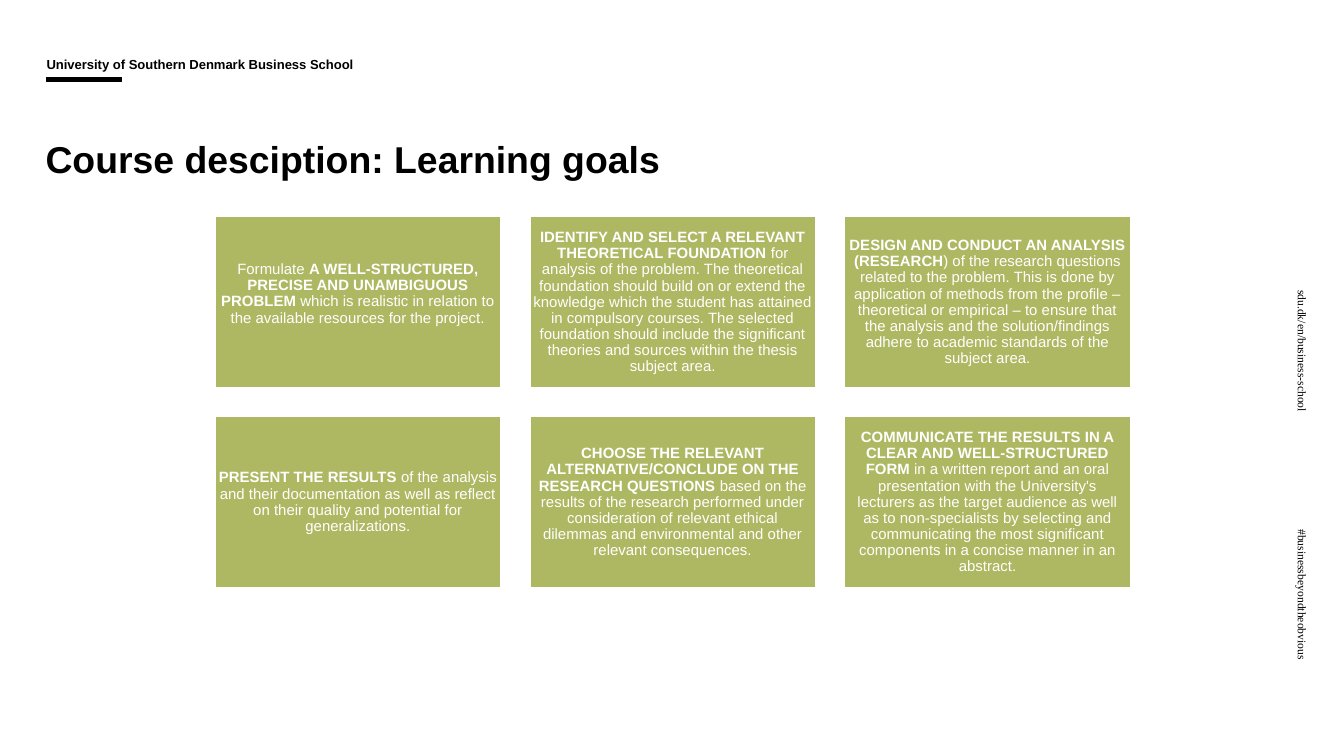
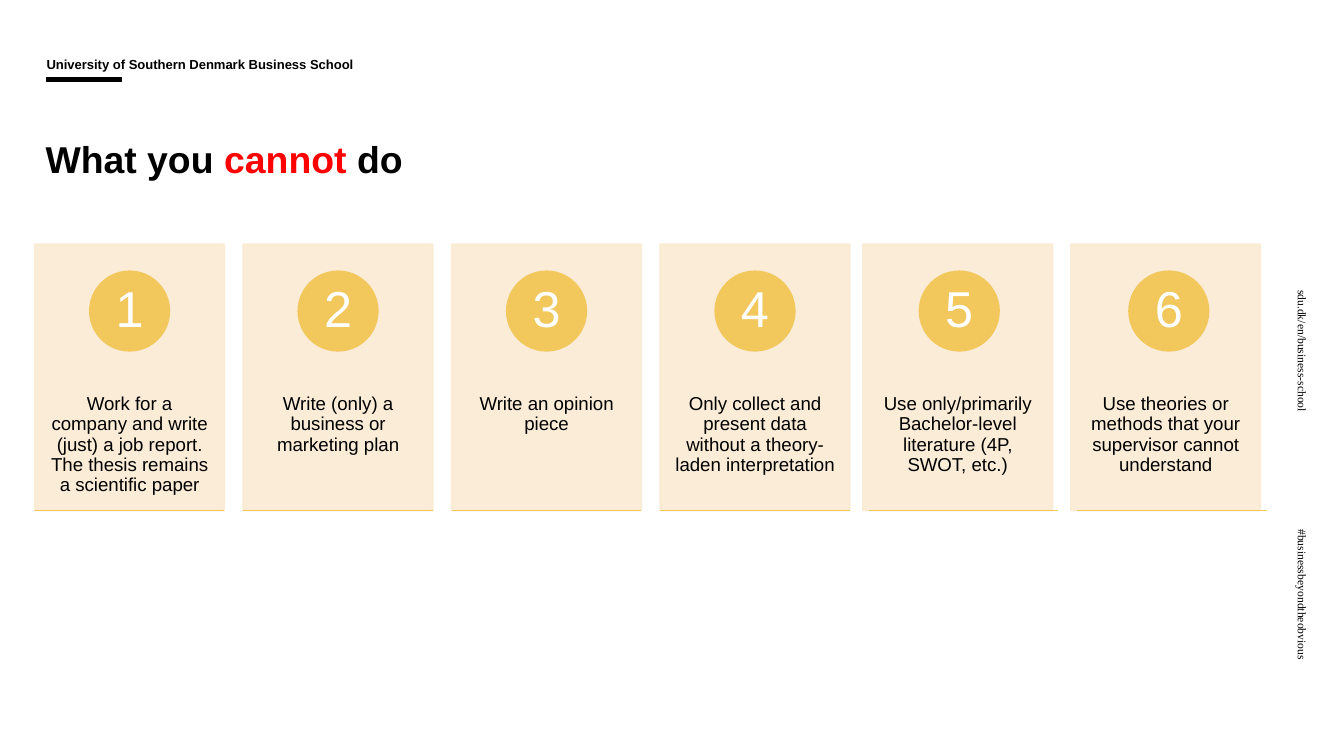
"""Build two slides on the learning goals of a thesis and what it must avoid."""
from lxml.etree import SubElement
from pptx import Presentation
from pptx.dml.color import RGBColor
from pptx.enum.shapes import MSO_CONNECTOR, MSO_SHAPE
from pptx.enum.text import MSO_ANCHOR, MSO_AUTO_SIZE, PP_ALIGN
from pptx.oxml.ns import qn
from pptx.util import Cm, Pt

BLACK = RGBColor(0x00, 0x00, 0x00)
WHITE = RGBColor(0xFF, 0xFF, 0xFF)
RED = RGBColor(0xFF, 0x00, 0x00)
OLIVE = RGBColor(0xAE, 0xB8, 0x62)
CREAM = RGBColor(0xFA, 0xEB, 0xD2)
GOLD = RGBColor(0xF2, 0xC7, 0x5C)

BOLD = {"bold": True}
HEADER = "University of Southern Denmark Business School"
SIDE_TEXTS = [("sdu.dk/en/business-school", 6.88), ("#businessbeyondtheobvious", 11.4)]

GOALS_TITLE = [("Course desciption: Learning goals", {})]
GOALS = [
    [("Formulate ", {}),
     ("A WELL-STRUCTURED, PRECISE AND UNAMBIGUOUS PROBLEM ", BOLD),
     ("which is realistic in relation to the available resources for the project.", {})],
    [("IDENTIFY AND SELECT A RELEVANT THEORETICAL FOUNDATION ", BOLD),
     ("for analysis of the problem. The theoretical foundation should build on or extend "
      "the knowledge which the student has attained in compulsory courses. The selected "
      "foundation should include the significant theories and sources within the thesis "
      "subject area.", {})],
    [("DESIGN AND CONDUCT AN ANALYSIS (RESEARCH", BOLD),
     (") of the research questions related to the problem. This is done by application of "
      "methods from the profile – theoretical or empirical – to ensure that the analysis "
      "and the solution/findings adhere to academic standards of the subject area.", {})],
    [("PRESENT THE RESULTS", BOLD),
     (" of the analysis and their documentation as well as reflect on their quality and "
      "potential for generalizations.", {})],
    [("CHOOSE THE RELEVANT ALTERNATIVE/CONCLUDE ON THE RESEARCH QUESTIONS ", BOLD),
     ("based on the results of the research performed under consideration of relevant "
      "ethical dilemmas and environmental and other relevant consequences.", {})],
    [("COMMUNICATE THE RESULTS IN A CLEAR AND WELL-STRUCTURED FORM", BOLD),
     (" in a written report and an oral presentation with the University's lecturers as the "
      "target audience as well as to non-specialists by selecting and communicating the most "
      "significant components in a concise manner in an abstract.", {})],
]
GOAL_BOTTOM_INSETS = [0.38, 0.07, 0.07, 0.07, 0.07, 0.07]

LIMITS_TITLE = [("What you ", {}), ("cannot", {"color": RED}), (" do", {})]
LIMITS = [
    "Work for a company and write (just) a job report. The thesis remains a scientific paper",
    "Write (only) a business or marketing plan",
    "Write an opinion piece",
    "Only collect and present data without a theory-laden interpretation",
    "Use only/primarily Bachelor-level literature (4P, SWOT, etc.)",
    "Use theories or methods that your supervisor cannot understand",
]
CARD_SHIFTS = [0, 0, 0, 0, -0.11, -0.12]
CIRCLE_SHIFTS = [0, 0, 0, 0, -0.08, -0.06]

TITLE_STYLE = {"size": Pt(20), "name": "Arial", "bold": True, "color": BLACK}
HEADER_STYLE = {"size": Pt(7), "name": "Arial", "bold": True, "color": BLACK}
SIDE_STYLE = {"size": Pt(6.2), "name": "Times New Roman", "color": BLACK}
GOAL_STYLE = {"size": Pt(8), "name": "Arial", "bold": False, "color": WHITE}
NUMBER_STYLE = {"size": Pt(27), "name": "Arial", "color": WHITE}
LIMIT_STYLE = {"size": Pt(10), "name": "Arial", "color": BLACK}


def write(shape, runs, style, anchor, align=PP_ALIGN.LEFT, spacing=0.9, insets=(0, 0, 0, 0)):
    """Fill a shape with one paragraph; insets run left, top, right, bottom in cm."""
    left, top, right, bottom = map(Cm, insets)
    frame = shape.text_frame
    frame_format = {"word_wrap": True, "auto_size": MSO_AUTO_SIZE.NONE,
                    "vertical_anchor": anchor, "margin_left": left, "margin_top": top,
                    "margin_right": right, "margin_bottom": bottom}
    for name, value in frame_format.items():
        setattr(frame, name, value)
    paragraph = frame.paragraphs[0]
    paragraph.alignment = align
    paragraph.line_spacing = spacing
    for text, changes in runs:
        run = paragraph.add_run()
        run.text = text
        for name, value in {**style, **changes}.items():
            if name == "color":
                run.font.color.rgb = value
            else:
                setattr(run.font, name, value)


def add_box(slide, kind, place, fill, line, opacity=100):
    """Add a filled preset shape at a place given in cm."""
    shape = slide.shapes.add_shape(kind, *map(Cm, place))
    shape.shadow.inherit = False
    shape.fill.solid()
    shape.fill.fore_color.rgb = fill
    shape.line.color.rgb = line
    shape.line.width = Pt(1)
    if opacity < 100:
        for color in shape._element.spPr.iter(qn("a:srgbClr")):
            SubElement(color, qn("a:alpha"), val=str(opacity * 1000))
    return shape


def add_rule(slide, left, top, width, color, weight):
    """Add a horizontal line at a place given in cm."""
    rule = slide.shapes.add_connector(
        MSO_CONNECTOR.STRAIGHT, Cm(left), Cm(top), Cm(left + width), Cm(top))
    rule.line.color.rgb = color
    rule.line.width = Pt(weight)
    SubElement(rule._element.spPr, qn("a:effectLst"))


def add_slide(presentation, title_runs):
    """Add a slide with the shared header, side texts and title."""
    slide = presentation.slides.add_slide(presentation.layouts_by_name["Title Only"]
                                          if hasattr(presentation, "layouts_by_name")
                                          else presentation.slide_layouts[5])
    for text, top in SIDE_TEXTS:
        side = slide.shapes.add_textbox(Cm(23.09), Cm(top), Cm(3.58), Cm(0.79))
        side.rotation = 90
        write(side, [(text, {})], SIDE_STYLE, MSO_ANCHOR.BOTTOM, spacing=1.0)
    add_rule(slide, 0.86, 1.5, 1.45, BLACK, 3)
    header = slide.shapes.add_textbox(Cm(0.86), Cm(1.1), Cm(11.84), Cm(0.42))
    write(header, [(HEADER, {})], HEADER_STYLE, MSO_ANCHOR.BOTTOM, insets=(0.02, 0, 0, 0.15))
    title = slide.shapes.title
    place = {"left": Cm(0.86), "top": Cm(2.49), "width": Cm(21.34), "height": Cm(9.37)}
    for name, value in place.items():
        setattr(title, name, value)
    write(title, title_runs, TITLE_STYLE, MSO_ANCHOR.TOP, spacing=1.1)
    return slide


def build_goals(presentation):
    """Lay the learning goals out in a grid of three columns."""
    slide = add_slide(presentation, GOALS_TITLE)
    for index, (goal, bottom) in enumerate(zip(GOALS, GOAL_BOTTOM_INSETS)):
        row, column = divmod(index, 3)
        place = (4.06 + column * 5.95, 4.09 + row * 3.78, 5.41, 3.25)
        box = add_box(slide, MSO_SHAPE.RECTANGLE, place, OLIVE, WHITE)
        write(box, goal, GOAL_STYLE, MSO_ANCHOR.MIDDLE, PP_ALIGN.CENTER,
              insets=(0.07, 0.07, 0.07, bottom))


def build_limits(presentation):
    """Lay the limits out as a row of numbered cards."""
    slide = add_slide(presentation, LIMITS_TITLE)
    cards = zip(LIMITS, CARD_SHIFTS, CIRCLE_SHIFTS)
    for index, (limit, card_shift, circle_shift) in enumerate(cards):
        left = 0.66 + index * 3.94
        card = add_box(slide, MSO_SHAPE.RECTANGLE, (left + card_shift, 4.62, 3.58, 5.03),
                       CREAM, CREAM, opacity=90)
        write(card, [(limit, {})], LIMIT_STYLE, MSO_ANCHOR.TOP, PP_ALIGN.CENTER,
              insets=(0.28, 2.84, 0.28, 0))
        circle = add_box(slide, MSO_SHAPE.OVAL, (left + 1.04 + circle_shift, 5.13, 1.5, 1.5),
                         GOLD, GOLD)
        write(circle, [(str(index + 1), {})], NUMBER_STYLE, MSO_ANCHOR.MIDDLE, PP_ALIGN.CENTER)
        add_rule(slide, left, 9.65, 3.58, GOLD, 1)


def main():
    """Build and save the presentation."""
    presentation = Presentation()
    presentation.slide_width = Cm(25.4)
    presentation.slide_height = Cm(14.29)
    build_goals(presentation)
    build_limits(presentation)
    presentation.save("out.pptx")


if __name__ == "__main__":
    main()
